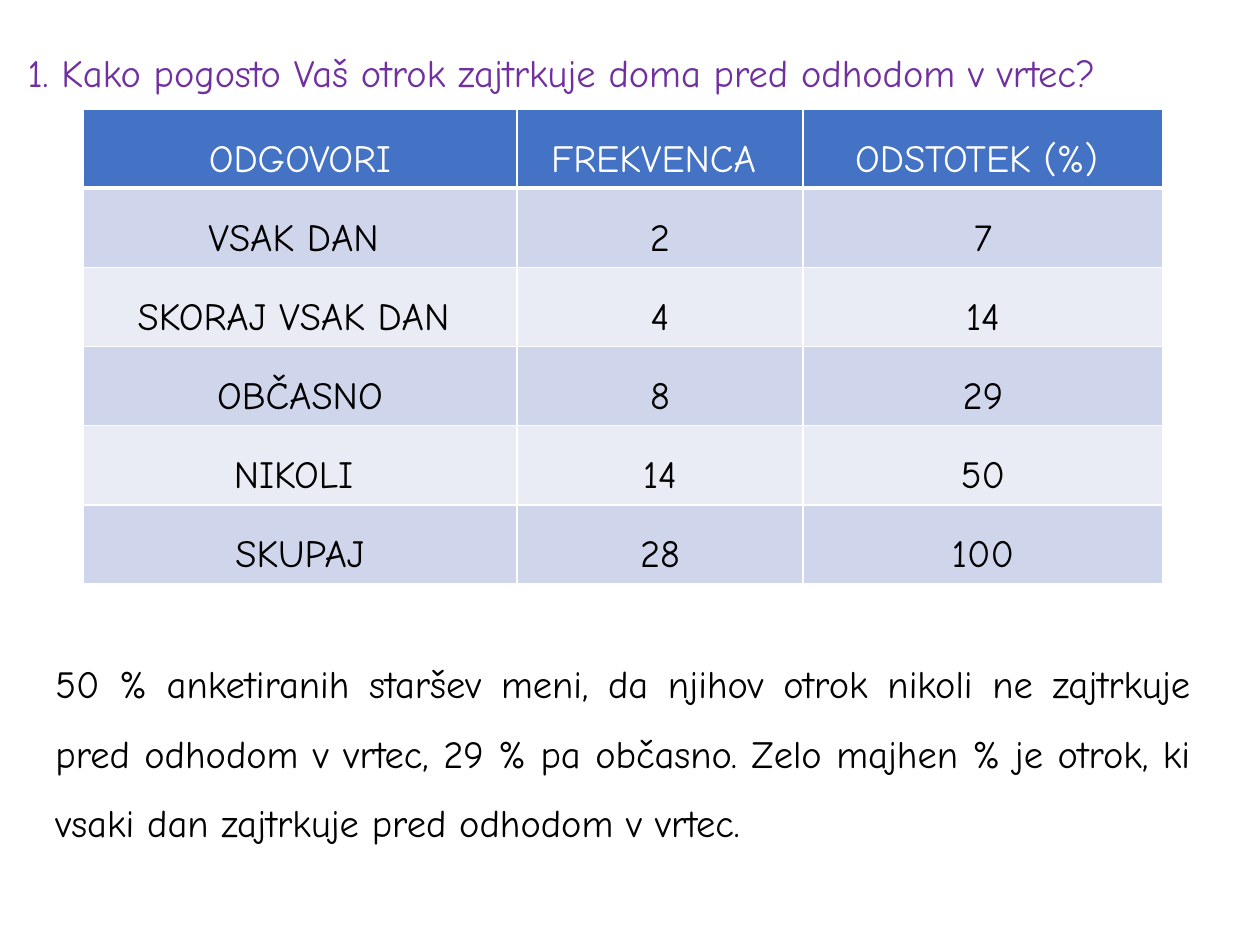
import lxml.etree
import pptx
import pptx.dml.color
import pptx.enum.text
import pptx.oxml.ns
import pptx.util

RGBColor = pptx.dml.color.RGBColor
PP_ALIGN = pptx.enum.text.PP_ALIGN
MSO_ANCHOR = pptx.enum.text.MSO_ANCHOR
MSO_AUTO_SIZE = pptx.enum.text.MSO_AUTO_SIZE

PURPLE = RGBColor(0x70, 0x30, 0xA0)
BLUE = RGBColor(0x44, 0x72, 0xC4)
BAND_DARK = RGBColor(0xCF, 0xD5, 0xEA)
BAND_LIGHT = RGBColor(0xE9, 0xEB, 0xF5)
WHITE = RGBColor(0xFF, 0xFF, 0xFF)
BLACK = RGBColor(0, 0, 0)

FONT = "Comic Neue"
PX_PER_INCH = 126

QUESTION = "1. Kako pogosto Vaš otrok zajtrkuje doma pred odhodom v vrtec?"
ANSWERS = [
    ("ODGOVORI", "FREKVENCA ", "ODSTOTEK (%) "),
    ("VSAK DAN ", "2", "7"),
    ("SKORAJ VSAK DAN ", "4", "14"),
    ("OBČASNO", "8", "29"),
    ("NIKOLI ", "14", "50"),
    ("SKUPAJ", "28", "100"),
]
FINDING = (
    "50 % anketiranih staršev meni, da njihov otrok nikoli ne zajtrkuje "
    "pred odhodom v vrtec, 29 % pa občasno. Zelo majhen % je otrok, ki "
    "vsaki dan zajtrkuje pred odhodom v vrtec. "
)


def px(length):
    return pptx.util.Emu(round(length * 914400 / PX_PER_INCH))


def write(text_frame, text, color, alignment):
    text_frame.text = text
    paragraph = text_frame.paragraphs[0]
    paragraph.alignment = alignment
    paragraph.line_spacing = 1.5
    font = paragraph.runs[0].font
    font.name = FONT
    font.size = pptx.util.Pt(22)
    font.color.rgb = color


def set_borders(cell, widths):
    properties = cell._tc.get_or_add_tcPr()
    for position, (side, width) in enumerate(widths.items()):
        line = lxml.etree.Element(
            pptx.oxml.ns.qn(f"a:ln{side}"), w=str(pptx.util.Pt(width))
        )
        fill = lxml.etree.SubElement(line, pptx.oxml.ns.qn("a:solidFill"))
        lxml.etree.SubElement(fill, pptx.oxml.ns.qn("a:srgbClr"), val=str(WHITE))
        properties.insert(position, line)


def add_question(slide, left, top, width, height):
    question = slide.shapes.title
    question.left, question.top = px(left), px(top)
    question.width, question.height = px(width), px(height)
    frame = question.text_frame
    write(frame, QUESTION, PURPLE, PP_ALIGN.LEFT)
    frame.word_wrap = True
    frame.auto_size = MSO_AUTO_SIZE.NONE
    frame.vertical_anchor = MSO_ANCHOR.MIDDLE


def add_answers(slide, left, top, width, height):
    answers_frame = slide.shapes.add_table(
        len(ANSWERS), len(ANSWERS[0]), px(left), px(top), px(width), px(height)
    )
    answers = answers_frame.table
    column_widths = (434, 286, width - 434 - 286)
    for column, column_width in zip(answers.columns, column_widths):
        column.width = px(column_width)
    for row in answers.rows:
        row.height = px(52)
    answers_frame.height = px(height)

    for row_index, answer in enumerate(ANSWERS):
        is_header = row_index == 0
        band = BAND_DARK if row_index % 2 else BAND_LIGHT
        borders = {
            "L": 1,
            "R": 1,
            "T": 3 if row_index == 1 else 1,
            "B": 3 if is_header else 1,
        }
        for column_index, text in enumerate(answer):
            cell = answers.cell(row_index, column_index)
            cell.fill.solid()
            cell.fill.fore_color.rgb = BLUE if is_header else band
            write(
                cell.text_frame, text, WHITE if is_header else BLACK, PP_ALIGN.CENTER
            )
            cell.text_frame.paragraphs[0].runs[0].font.bold = False
            set_borders(cell, borders)


def add_finding(slide, left, top, width, height):
    finding = slide.shapes.add_textbox(px(left), px(top), px(width), px(height))
    frame = finding.text_frame
    write(frame, FINDING, BLACK, PP_ALIGN.JUSTIFY)
    frame.word_wrap = True
    frame.auto_size = MSO_AUTO_SIZE.SHAPE_TO_FIT_TEXT
    frame.vertical_anchor = MSO_ANCHOR.MIDDLE
    frame.margin_bottom = px(66)


def main():
    presentation = pptx.Presentation()
    presentation.slide_width = px(1260)
    presentation.slide_height = px(945)
    slide = presentation.slides.add_slide(presentation.slide_layouts[5])
    add_question(slide, 15, 16, 1230, 90)
    add_answers(slide, 83, 109, 1080, 446)
    add_finding(slide, 43, 631, 1160, 280)
    presentation.save("out.pptx")


if __name__ == "__main__":
    main()
